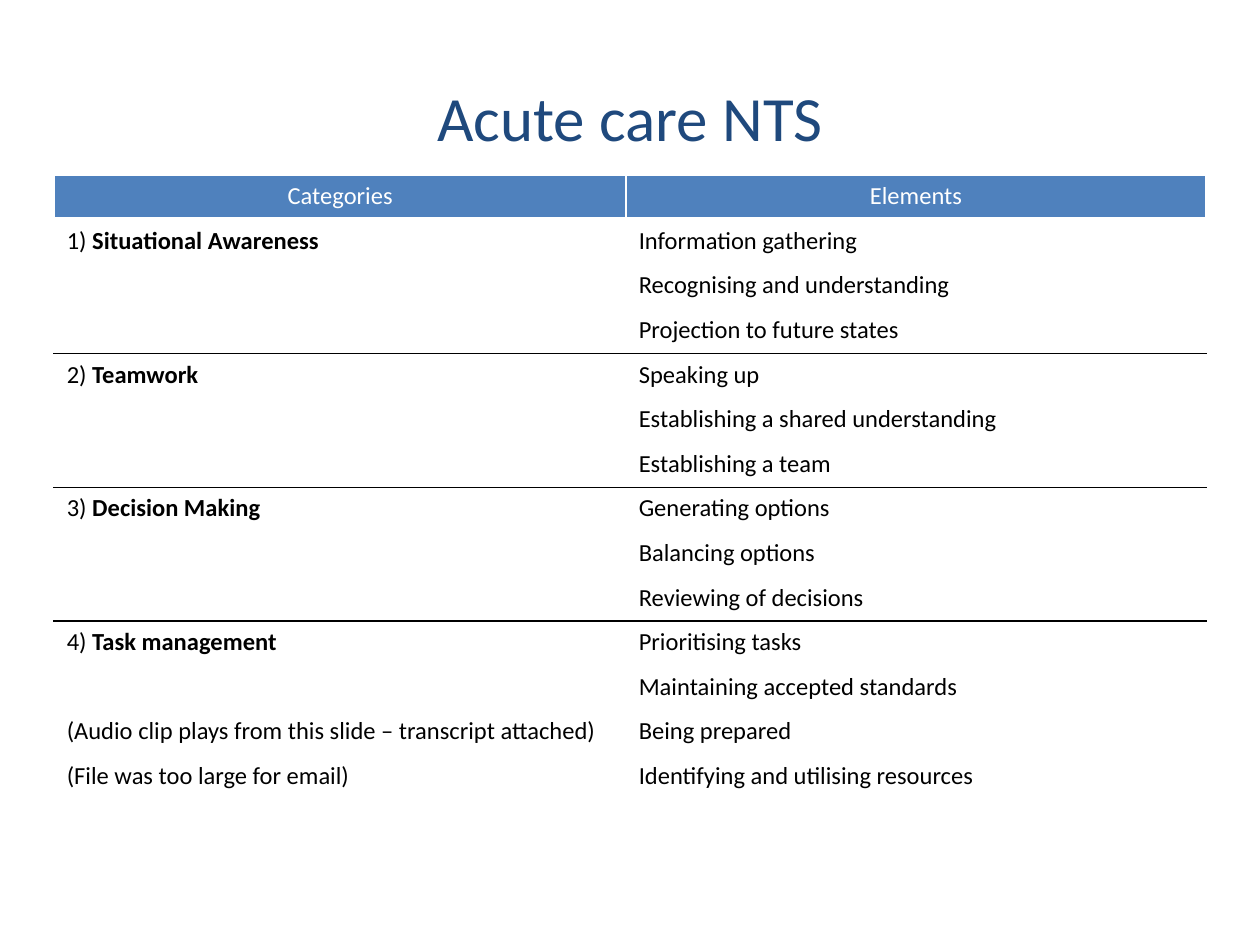
from dataclasses import dataclass

import pptx
import pptx.dml.color
import pptx.enum.text
import pptx.oxml
import pptx.oxml.ns
import pptx.util
from pptx.util import Inches

ALIGN = pptx.enum.text.PP_ALIGN
ANCHOR = pptx.enum.text.MSO_ANCHOR


@dataclass(frozen=True)
class Theme:
    font: str = "Calibri"
    title_size: int = 36
    table_size: int = 14
    title: str = "1F497D"
    header: str = "4F81BD"
    white: str = "FFFFFF"
    black: str = "000000"


@dataclass(frozen=True)
class Category:
    name: str
    elements: tuple[str, ...]
    notes: tuple[str, ...] = ()


THEME = Theme()
HEADERS = ("Categories", "Elements")
COLUMN_WIDTHS = (4.54, 4.6)
TABLE_HEIGHT = 4.96
CATEGORIES = (
    Category("Situational Awareness", (
        "Information gathering", "Recognising and understanding",
        "Projection to future states")),
    Category("Teamwork", (
        "Speaking up", "Establishing a shared understanding",
        "Establishing a team")),
    Category("Decision Making", (
        "Generating options", "Balancing options", "Reviewing of decisions")),
    Category("Task management", (
        "Prioritising tasks", "Maintaining accepted standards",
        "Being prepared", "Identifying and utilising resources"),
        ("(Audio clip plays from this slide – transcript attached)",
         "(File was too large for email)")),
)


def add_text(p, text: str, *, size: int = THEME.table_size,
             color: str = THEME.black, bold: bool = False,
             align=ALIGN.LEFT) -> None:
    """Append a run; empty text only sets the height of the empty line."""
    p.alignment = align
    if not text:
        p._p.append(pptx.oxml.parse_xml(
            f'<a:endParaRPr {pptx.oxml.ns.nsdecls("a")} sz="{size * 100}"/>'))
        return
    r = p.add_run()
    r.text = text
    r.font.name = THEME.font
    r.font.size = pptx.util.Pt(size)
    r.font.bold = bold
    r.font.color.rgb = pptx.dml.color.RGBColor.from_string(color)


def style_cell(cell, fill: str, *, top: str = THEME.white,
               bottom: str = THEME.white, bottom_width: int = 1) -> None:
    tc_pr = cell._tc.get_or_add_tcPr()
    borders = (("L", THEME.white, 1), ("R", THEME.white, 1),
               ("T", top, 1), ("B", bottom, bottom_width))
    for side, color, width in borders:
        tc_pr.append(pptx.oxml.parse_xml(
            f'<a:ln{side} {pptx.oxml.ns.nsdecls("a")} w="{pptx.util.Pt(width)}">'
            f'<a:solidFill><a:srgbClr val="{color}"/></a:solidFill>'
            f'</a:ln{side}>'))
    cell.fill.solid()
    cell.fill.fore_color.rgb = pptx.dml.color.RGBColor.from_string(fill)


def fill_category(table, first_row: int, number: int, category: Category) -> None:
    """Write one category, ruled off from its neighbours in black."""
    count = len(category.elements)
    notes_start = count - len(category.notes)
    for i, element in enumerate(category.elements):
        left, right = table.rows[first_row + i].cells
        p = left.text_frame.paragraphs[0]
        if i == 0:
            add_text(p, f"{number}) ")
            add_text(p, category.name, bold=True)
        else:
            add_text(p, category.notes[i - notes_start] if i >= notes_start else "")
        add_text(right.text_frame.paragraphs[0], element)
        rule_above = i == 0 and number > 1
        rule_below = i == count - 1 and number < len(CATEGORIES)
        for cell in (left, right):
            style_cell(cell, THEME.white,
                       top=THEME.black if rule_above else THEME.white,
                       bottom=THEME.black if rule_below else THEME.white)


def add_skills_table(s) -> None:
    row_count = 1 + sum(len(c.elements) for c in CATEGORIES)
    table = s.shapes.add_table(
        row_count, len(HEADERS), Inches(0.43), Inches(1.39),
        Inches(sum(COLUMN_WIDTHS)), Inches(TABLE_HEIGHT)).table
    for column, width in zip(table.columns, COLUMN_WIDTHS):
        column.width = Inches(width)
    for cell, header in zip(table.rows[0].cells, HEADERS):
        add_text(cell.text_frame.paragraphs[0], header,
                 color=THEME.white, align=ALIGN.CENTER)
        style_cell(cell, THEME.header, bottom_width=3)
    row = 1
    for number, category in enumerate(CATEGORIES, 1):
        fill_category(table, row, number, category)
        row += len(category.elements)


def add_title(s, text: str) -> None:
    sp = s.shapes.title
    sp.left, sp.top = Inches(0.5), Inches(0.3)
    sp.width, sp.height = Inches(9), Inches(1.25)
    tf = sp.text_frame
    tf.vertical_anchor = ANCHOR.MIDDLE
    add_text(tf.paragraphs[0], text, size=THEME.title_size,
             color=THEME.title, align=ALIGN.CENTER)


def main() -> None:
    prs = pptx.Presentation()
    prs.slide_width, prs.slide_height = Inches(10), Inches(7.5)
    s = prs.slides.add_slide(prs.slide_layouts[5])
    add_title(s, "Acute care NTS")
    add_skills_table(s)
    prs.save("out.pptx")


if __name__ == "__main__":
    main()
